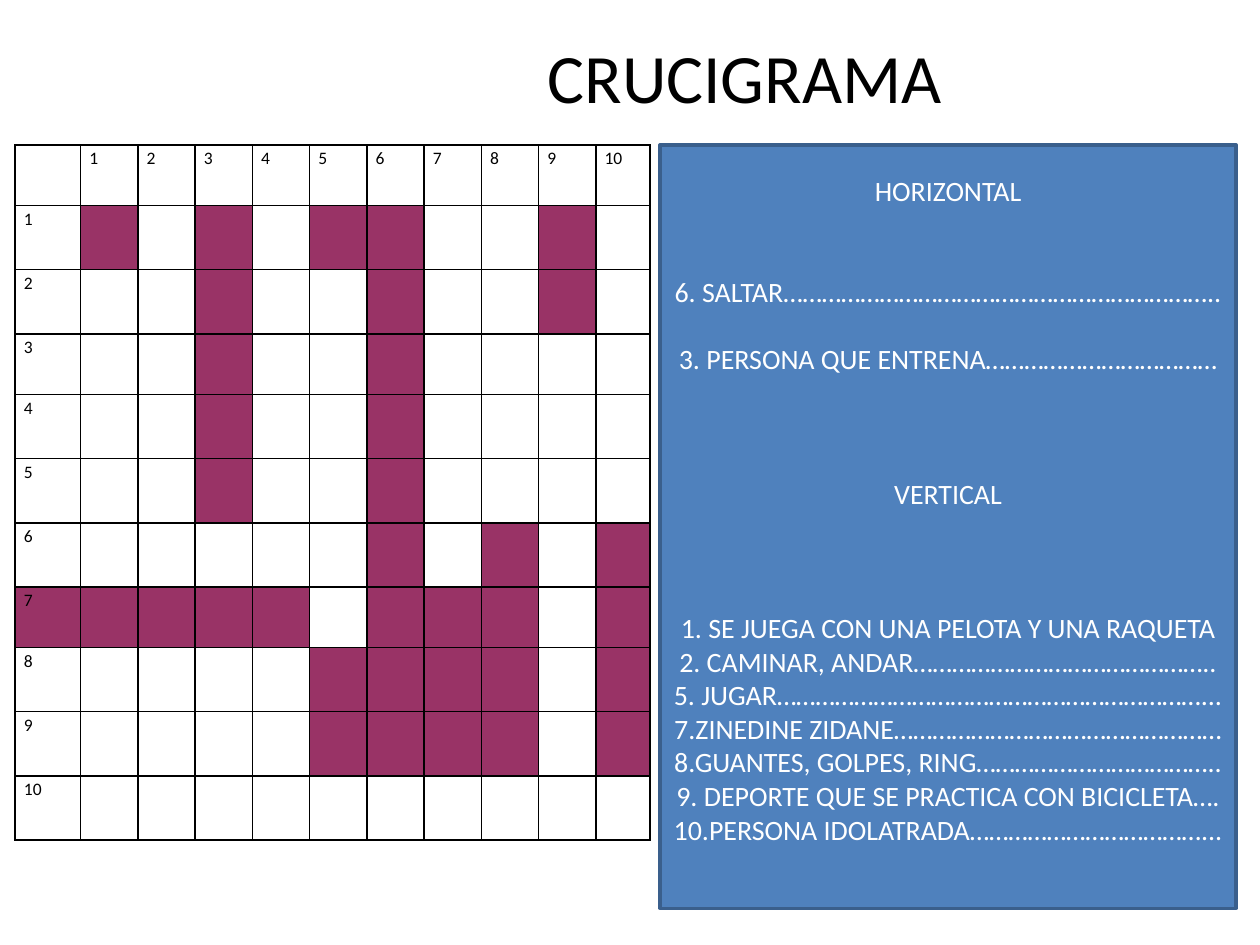
"""Build a crossword slide with its grid and a panel of clues."""
from dataclasses import dataclass

from lxml import etree
from pptx import Presentation
from pptx.dml.color import RGBColor
from pptx.enum.shapes import MSO_SHAPE
from pptx.enum.text import MSO_ANCHOR, PP_ALIGN
from pptx.oxml.ns import qn
from pptx.util import Inches, Pt

RECTANGLE = MSO_SHAPE.RECTANGLE
MIDDLE = MSO_ANCHOR.MIDDLE
CENTER = PP_ALIGN.CENTER
FONT = "Calibri"
COLORS = {
    "ink": "000000", "paper": "FFFFFF", "filled": "993366",
    "panel": "4F81BD", "panel_edge": "3A5F8C",
}
UNIT = Inches(0.1)
PAGE_COLUMNS, PAGE_ROWS = 100, 75
CLUE_SIZE = 16
BLANK_LINE = Pt(19.2)
EDGES = ("a:lnL", "a:lnR", "a:lnT", "a:lnB")
PATTERN = (
    "...........",
    ".#.#.##..#.",
    "...#..#..#.",
    "...#..#....",
    "...#..#....",
    "...#..#....",
    "......#.#.#",
    "#####.###.#",
    ".....####.#",
    ".....####.#",
    "...........",
)
SHORT_ROWS = (0, 3, 7)
SHORT_HEIGHT, TALL_HEIGHT = 4.8, 5.1
FIRST_WIDTH, LAST_WIDTH = 5.2, 4.3


@dataclass(frozen=True)
class Area:
    """Place on the page, in page columns and rows."""
    left: float
    top: float
    width: float
    height: float

    def lengths(self) -> list[int]:
        """Return left, top, width and height as slide lengths."""
        return [round(value * UNIT) for value in (self.left, self.top, self.width, self.height)]


@dataclass(frozen=True)
class Clue:
    """Line of the panel and the number of line gaps above it."""
    text: str
    gap: int = 0


TITLE_AREA = Area(23.2, 3, 71.8, 6.1)
PANEL_AREA = Area(52.4, 11.5, 45.7, 60.6)
GRID_AREA = Area(1.2, 11.5, 50.4, 55.1)
CLUES = (
    Clue("HORIZONTAL"),
    Clue("6. SALTAR…………………………………………………………..", 2),
    Clue("3. PERSONA QUE ENTRENA………………………………", 1),
    Clue("VERTICAL", 3),
    Clue("1. SE JUEGA CON UNA PELOTA Y UNA RAQUETA", 3),
    Clue("2. CAMINAR, ANDAR……………………………………….."),
    Clue("5. JUGAR…………………………………………………………..."),
    Clue("7.ZINEDINE ZIDANE……………………………………………"),
    Clue("8.GUANTES, GOLPES, RING……………………………….."),
    Clue("9. DEPORTE QUE SE PRACTICA CON BICICLETA…."),
    Clue("10.PERSONA IDOLATRADA………………………………..."),
)


def color(name: str) -> RGBColor:
    """Look up a named colour."""
    return RGBColor.from_string(COLORS[name])


def format_runs(para, size: float, ink: str) -> None:
    """Set font, size and colour on the runs of a paragraph."""
    for span in para.runs:
        span.font.name = FONT
        span.font.size = Pt(size)
        span.font.color.rgb = color(ink)


def draw_title(page, text: str, area: Area) -> None:
    """Write the centred title."""
    frame = page.shapes.add_textbox(*area.lengths()).text_frame
    frame.text = text
    frame.word_wrap = True
    frame.vertical_anchor = MIDDLE
    para = frame.paragraphs[0]
    para.alignment = CENTER
    format_runs(para, 39.6, "ink")


def draw_panel(page, clues: tuple[Clue, ...], area: Area) -> None:
    """Draw the panel with its spaced clues."""
    panel = page.shapes.add_shape(RECTANGLE, *area.lengths())
    panel.shadow.inherit = False
    panel.fill.solid()
    panel.fill.fore_color.rgb = color("panel")
    panel.line.color.rgb = color("panel_edge")
    panel.line.width = Pt(2)
    frame = panel.text_frame
    frame.word_wrap = True
    frame.vertical_anchor = MIDDLE
    frame.margin_left = frame.margin_right = Inches(0.05)
    frame.margin_bottom = Inches(0.05) + BLANK_LINE
    frame.text = "\n".join(clue.text for clue in clues)
    for para, clue in zip(frame.paragraphs, clues):
        para.alignment = CENTER
        para.space_before = clue.gap * BLANK_LINE
        format_runs(para, CLUE_SIZE, "paper")


def draw_borders(cell) -> None:
    """Give a cell a thin line on every side."""
    properties = cell._tc.get_or_add_tcPr()
    for edge in EDGES:
        line = etree.SubElement(properties, qn(edge), w=str(Pt(1)))
        fill = etree.SubElement(line, qn("a:solidFill"))
        etree.SubElement(fill, qn("a:srgbClr"), val=COLORS["ink"])


def format_cell(cell, label: str, filled: bool) -> None:
    """Draw one square of the crossword with its label."""
    cell.margin_left = cell.margin_right = Inches(0.07)
    cell.margin_top = cell.margin_bottom = 0
    draw_borders(cell)
    cell.fill.solid()
    cell.fill.fore_color.rgb = color("filled" if filled else "paper")
    if label:
        cell.text_frame.text = label
        para = cell.text_frame.paragraphs[0]
        para.line_spacing = 1.15
        format_runs(para, 10, "ink")


def draw_grid(page, pattern: tuple[str, ...], area: Area) -> None:
    """Draw the numbered crossword grid."""
    count = len(pattern)
    table = page.shapes.add_table(count, count, *area.lengths()).table
    table.first_row = table.horz_banding = False
    middle_width = (area.width - FIRST_WIDTH - LAST_WIDTH) / (count - 2)
    widths = [FIRST_WIDTH] + [middle_width] * (count - 2) + [LAST_WIDTH]
    for column, width in zip(table.columns, widths):
        column.width = round(width * UNIT)
    for row_index, marks in enumerate(pattern):
        height = SHORT_HEIGHT if row_index in SHORT_ROWS else TALL_HEIGHT
        table.rows[row_index].height = round(height * UNIT)
        for column_index, mark in enumerate(marks):
            on_edge = row_index == 0 or column_index == 0
            number = row_index + column_index
            label = str(number) if on_edge and number else ""
            format_cell(table.cell(row_index, column_index), label, mark == "#")


def main() -> None:
    """Build and save the deck."""
    deck = Presentation()
    deck.slide_width = PAGE_COLUMNS * UNIT
    deck.slide_height = PAGE_ROWS * UNIT
    page = deck.slides.add_slide(deck.slide_layouts[6])
    draw_title(page, "CRUCIGRAMA", TITLE_AREA)
    draw_panel(page, CLUES, PANEL_AREA)
    draw_grid(page, PATTERN, GRID_AREA)
    deck.save("out.pptx")


if __name__ == "__main__":
    main()
